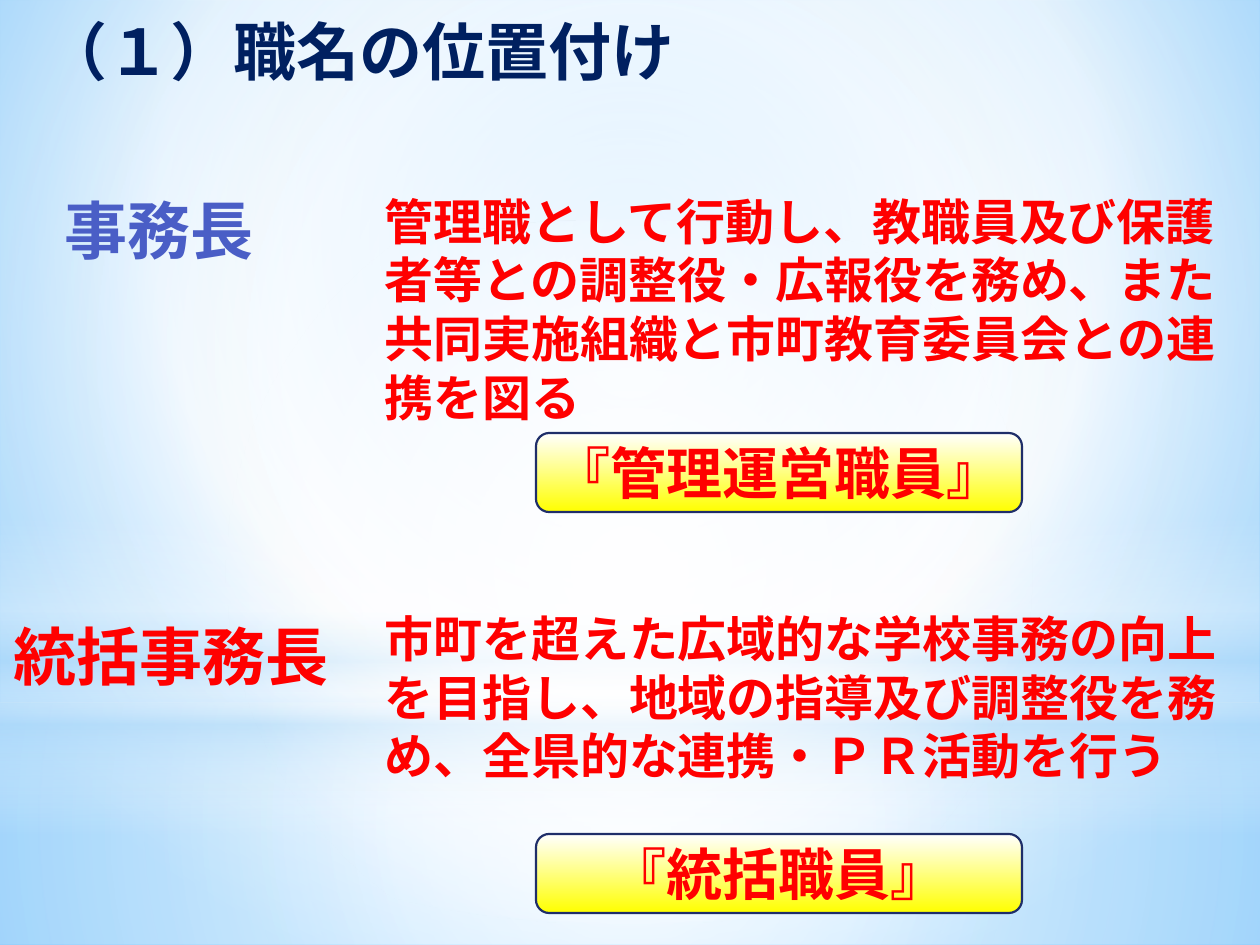
from dataclasses import dataclass

from lxml.etree import SubElement
from pptx import Presentation
from pptx.dml.color import RGBColor
from pptx.enum.lang import MSO_LANGUAGE_ID as Language
from pptx.enum.shapes import MSO_SHAPE as Shape
from pptx.enum.text import MSO_ANCHOR as Anchor
from pptx.enum.text import MSO_AUTO_SIZE as AutoSize
from pptx.enum.text import PP_ALIGN as Align
from pptx.oxml.ns import qn
from pptx.util import Emu, Pt

PIXELS_PER_INCH = 126
TITLE_ONLY = 5


@dataclass(frozen=True)
class Theme:
    font: str = "Cabin"
    label_font: str = "Noto Sans CJK JP"
    heading_size: int = 36
    label_size: int = 32
    body_size: int = 28
    navy: str = "002060"
    red: str = "FF0000"
    outline: str = "1F2E69"
    mist: str = "B4DCFA"
    white: str = "FFFFFF"
    yellow: str = "FFFF00"
    sky: tuple = ((0, "9ED5FF"), (60, "FFFFFF"), (100, "5BB9FF"))
    indigo: tuple = (
        (0, "717FD2"), (49, "4A5EC6"), (50, "324CB5"), (92, "31479D"), (100, "30469A"),
    )


THEME = Theme()
CENTER = (50, 50, 50, 50)


def px(value):
    return Emu(round(value * 914400 / PIXELS_PER_INCH))


def set_gradient(parent, stops, focus=None):
    solid = parent.find(qn("a:solidFill"))
    gradient = parent.makeelement(qn("a:gradFill"), {"rotWithShape": "1"})
    stop_list = SubElement(gradient, qn("a:gsLst"))
    for position, color, *alpha in stops:
        stop = SubElement(stop_list, qn("a:gs"), pos=str(position * 1000))
        swatch = SubElement(stop, qn("a:srgbClr"), val=color)
        if alpha:
            SubElement(swatch, qn("a:alpha"), val=str(alpha[0] * 1000))
    if focus:
        circle = SubElement(gradient, qn("a:path"), {"path": "circle"})
        sides = {side: str(value * 1000) for side, value in zip("ltrb", focus)}
        SubElement(circle, qn("a:fillToRect"), sides)
    else:
        SubElement(gradient, qn("a:lin"), ang="5400000", scaled="0")
    parent.replace(solid, gradient)


def write(frame, text, size, color=THEME.red, font=THEME.font,
          align=Align.LEFT, anchor=Anchor.TOP, gradient=None):
    frame.word_wrap = True
    frame.vertical_anchor = anchor
    paragraph = frame.paragraphs[0]
    paragraph.alignment = align
    run = paragraph.add_run()
    run.text = text
    run.font.size = Pt(size)
    run.font.bold = True
    run.font.language_id = Language.JAPANESE
    run.font.fill.solid()
    run.font.fill.fore_color.rgb = RGBColor.from_string(color)
    run.font.name = font
    properties = run.font._element
    if gradient:
        set_gradient(properties, gradient)
    latin = properties.find(qn("a:latin"))
    latin.addnext(properties.makeelement(qn("a:ea"), {"typeface": font}))


def add_gradient_shape(slide, kind, box, stops, focus=None):
    shape = slide.shapes.add_shape(kind, *map(px, box))
    shape.shadow.inherit = False
    shape.line.fill.background()
    shape.fill.solid()
    set_gradient(shape.element.spPr, stops, focus)
    return shape


def add_background(slide):
    slide.background.fill.solid()
    set_gradient(slide.element.find(".//" + qn("p:bgPr")), THEME.sky, (20, 10, 20, 60))
    white, mist = THEME.white, THEME.mist
    add_gradient_shape(slide, Shape.RECTANGLE, (0, 703, 1260, 242),
                       ((0, white, 91), (37, white, 76), (100, mist, 79)), CENTER)
    add_gradient_shape(slide, Shape.RECTANGLE, (0, 0, 1260, 703),
                       ((0, white, 89), (48, white, 62), (100, mist, 79)), CENTER)
    add_gradient_shape(slide, Shape.RECTANGLE, (0, 519, 1260, 315),
                       ((0, white, 0), (29, white, 30), (45, mist, 40),
                        (55, white, 26), (65, mist, 60), (100, white, 0)))
    add_gradient_shape(slide, Shape.OVAL, (0, 220, 1260, 703),
                       ((0, white), (56, white, 0)), CENTER)


def add_title(slide, text):
    title = slide.shapes.title
    title.left, title.top, title.width, title.height = map(px, (32, 6, 708, 89))
    title.text_frame.auto_size = AutoSize.SHAPE_TO_FIT_TEXT
    write(title.text_frame, text, THEME.heading_size, color=THEME.navy)
    title.element.getparent().append(title.element)


def add_text(slide, box, text, size, **text_format):
    frame = slide.shapes.add_textbox(*map(px, box)).text_frame
    frame.auto_size = AutoSize.SHAPE_TO_FIT_TEXT
    write(frame, text, size, **text_format)


def add_label(slide, top, text):
    label = add_gradient_shape(slide, Shape.ROUNDED_RECTANGLE, (536, top, 486, 79),
                               ((0, THEME.white), (100, THEME.yellow)))
    label.line.color.rgb = RGBColor.from_string(THEME.outline)
    label.line.width = Pt(1.25)
    write(label.text_frame, text, THEME.label_size, font=THEME.label_font,
          align=Align.CENTER, anchor=Anchor.MIDDLE)


def add_position(slide, name, name_box, duty, duty_box, label, label_top, gradient=None):
    add_text(slide, duty_box, duty, THEME.body_size)
    add_label(slide, label_top, label)
    add_text(slide, name_box, name, THEME.heading_size,
             align=Align.CENTER, gradient=gradient)


def main():
    presentation = Presentation()
    presentation.slide_width, presentation.slide_height = px(1260), px(945)
    slide = presentation.slides.add_slide(presentation.slide_layouts[TITLE_ONLY])
    add_background(slide)
    add_title(slide, "（１）職名の位置付け")
    add_position(
        slide, "事務長", (35, 185, 247, 89),
        "管理職として行動し、教職員及び保護者等との調整役・広報役を務め、"
        "また共同実施組織と市町教育委員会との連携を図る",
        (372, 185, 888, 251), "『管理運営職員』", 433, gradient=THEME.indigo)
    add_position(
        slide, "統括事務長", (-5, 611, 353, 89),
        "市町を超えた広域的な学校事務の向上を目指し、地域の指導及び調整役を務め、"
        "全県的な連携・ＰＲ活動を行う",
        (372, 602, 888, 190), "『統括職員』", 834)
    presentation.save("out.pptx")


if __name__ == "__main__":
    main()
